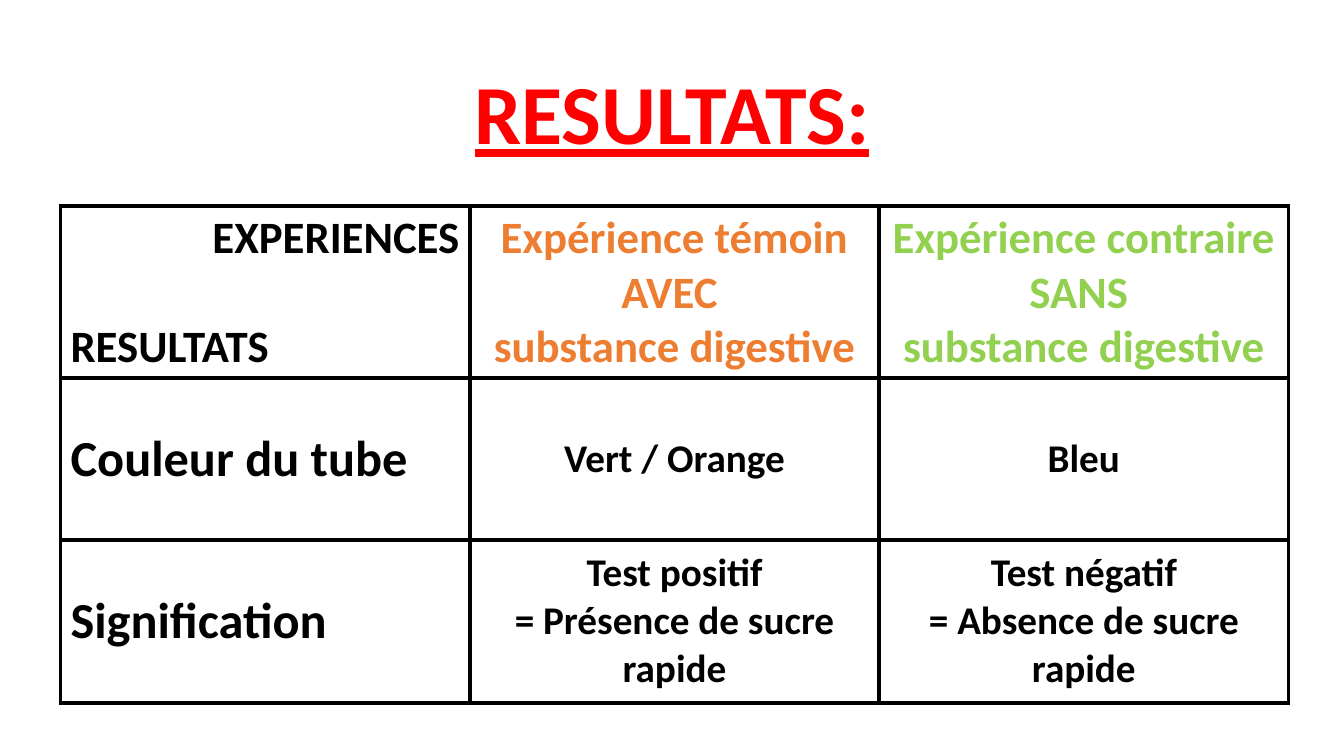
from lxml import etree
from pptx import Presentation
from pptx.dml.color import RGBColor
from pptx.enum.text import MSO_ANCHOR, PP_ALIGN
from pptx.oxml.ns import qn
from pptx.util import Pt

LEFT, MID, RIGHT = PP_ALIGN.LEFT, PP_ALIGN.CENTER, PP_ALIGN.RIGHT
TOP, CENTER, BOTTOM = MSO_ANCHOR.TOP, MSO_ANCHOR.MIDDLE, MSO_ANCHOR.BOTTOM
BLACK = RGBColor(0, 0, 0)
RED = RGBColor(0xFF, 0, 0)
ORANGE = RGBColor(0xED, 0x7D, 0x31)
GREEN = RGBColor(0x92, 0xD0, 0x50)


def write(frame, lines, size, color, align):
    for i, line in enumerate(lines):
        para = frame.paragraphs[0] if i == 0 else frame.add_paragraph()
        para.text = line
        para.alignment = align
        font = para.font
        font.name, font.size, font.bold = "Calibri", Pt(size), True
        font.color.rgb = color


def border(cell, width):
    props = cell._tc.get_or_add_tcPr()
    for side in ("lnL", "lnR", "lnT", "lnB"):
        line = etree.SubElement(props, qn("a:" + side), w=str(Pt(width)))
        fill = etree.SubElement(line, qn("a:solidFill"))
        etree.SubElement(fill, qn("a:srgbClr"), val=str(BLACK))


deck = Presentation()
deck.slide_width, deck.slide_height = Pt(960), Pt(540)
slide = deck.slides.add_slide(deck.slide_layouts[6])

# Title
title = slide.shapes.add_textbox(Pt(120), Pt(44.6), Pt(720), Pt(75)).text_frame
title.word_wrap = True
title.vertical_anchor = BOTTOM
write(title, ["RESULTATS:"], 60, RED, MID)
title.paragraphs[0].line_spacing = 0.9
title.paragraphs[0].font.underline = True

# Table: each cell holds lines, size, colour and alignment
rows = [
    [(["EXPERIENCES", "RESULTATS"], 32, BLACK, LEFT),
     (["Expérience témoin", "AVEC ", "substance digestive"], 32, ORANGE, MID),
     (["Expérience contraire", "SANS ", "substance digestive"], 32, GREEN, MID)],
    [(["Couleur du tube"], 36, BLACK, LEFT),
     (["Vert / Orange"], 28, BLACK, MID),
     (["Bleu"], 28, BLACK, MID)],
    [(["Signification"], 36, BLACK, LEFT),
     (["Test positif", "= Présence de sucre rapide"], 28, BLACK, MID),
     (["Test négatif", "= Absence de sucre rapide"], 28, BLACK, MID)],
]
table = slide.shapes.add_table(
    3, 3, Pt(43.2), Pt(146.9), Pt(877.2), Pt(348)).table
table.first_row = table.horz_banding = False
for r, row in enumerate(rows):
    table.rows[r].height = Pt(116)
    for c, (lines, size, color, align) in enumerate(row):
        cell = table.cell(r, c)
        cell.vertical_anchor = CENTER if r else TOP
        write(cell.text_frame, lines, size, color, align)
        border(cell, 3)
        cell.fill.background()

# Corner cell: column heading at the right, row heading one line lower
head, side = table.cell(0, 0).text_frame.paragraphs
head.alignment = RIGHT
side.space_before = Pt(39)

deck.save("out.pptx")
